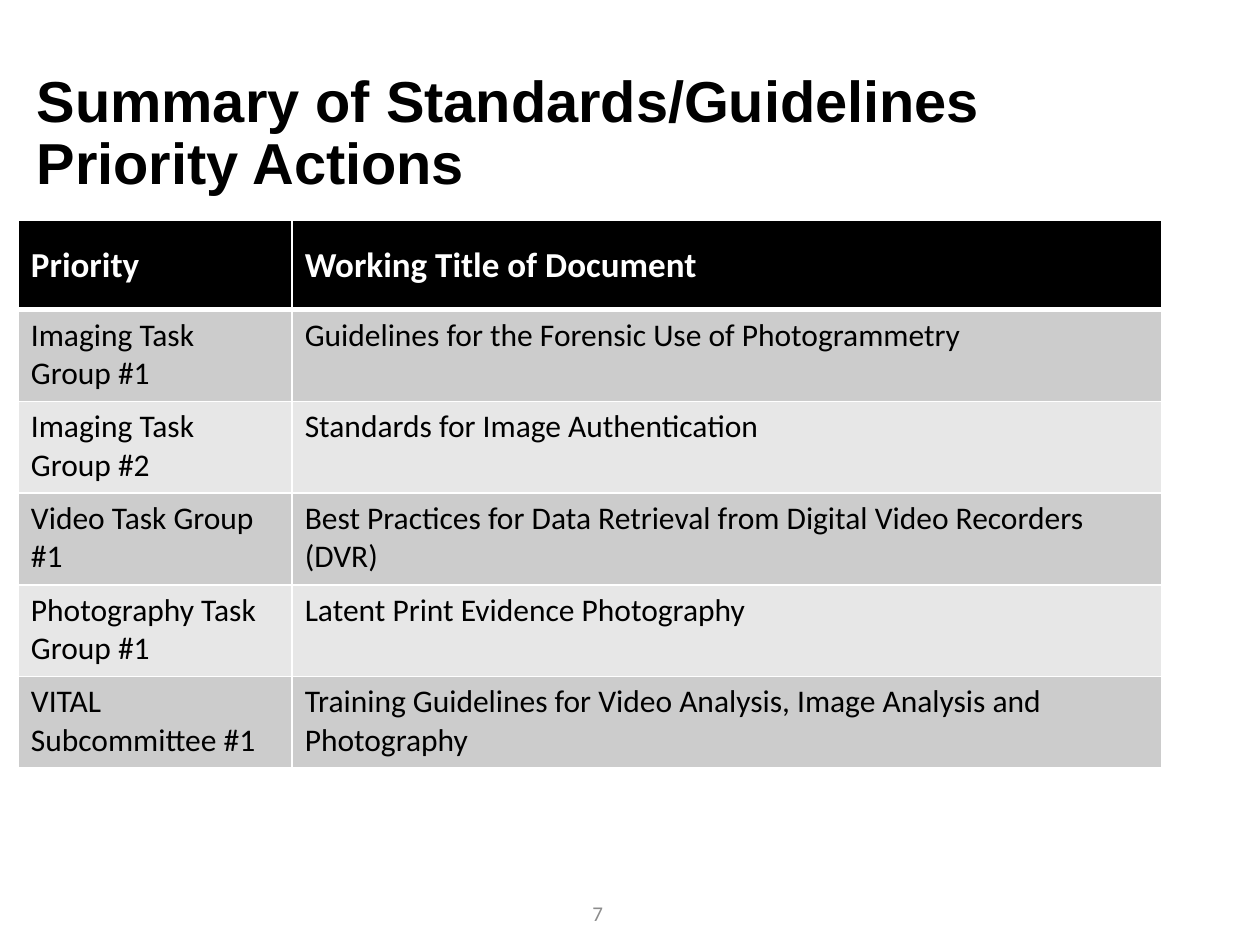
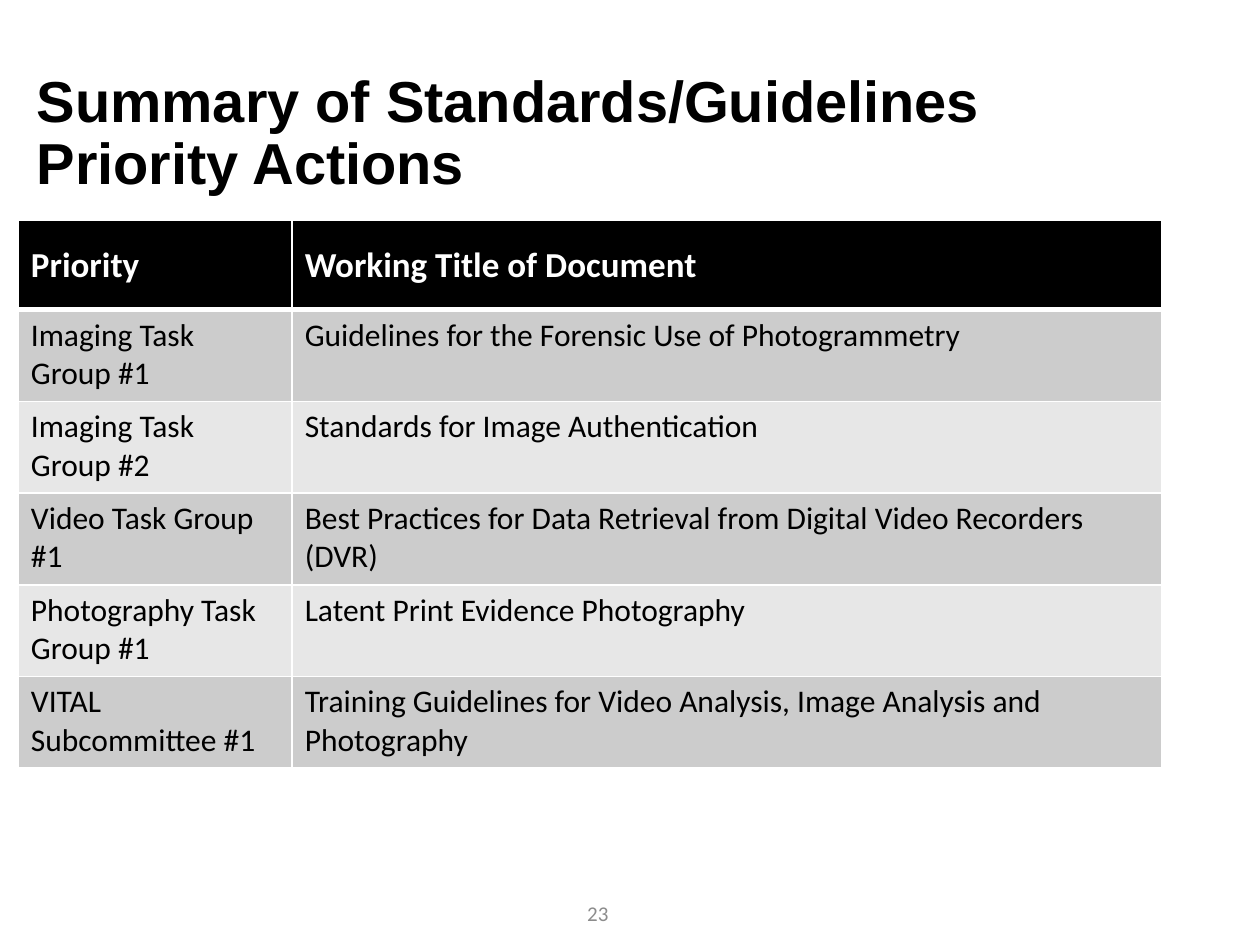
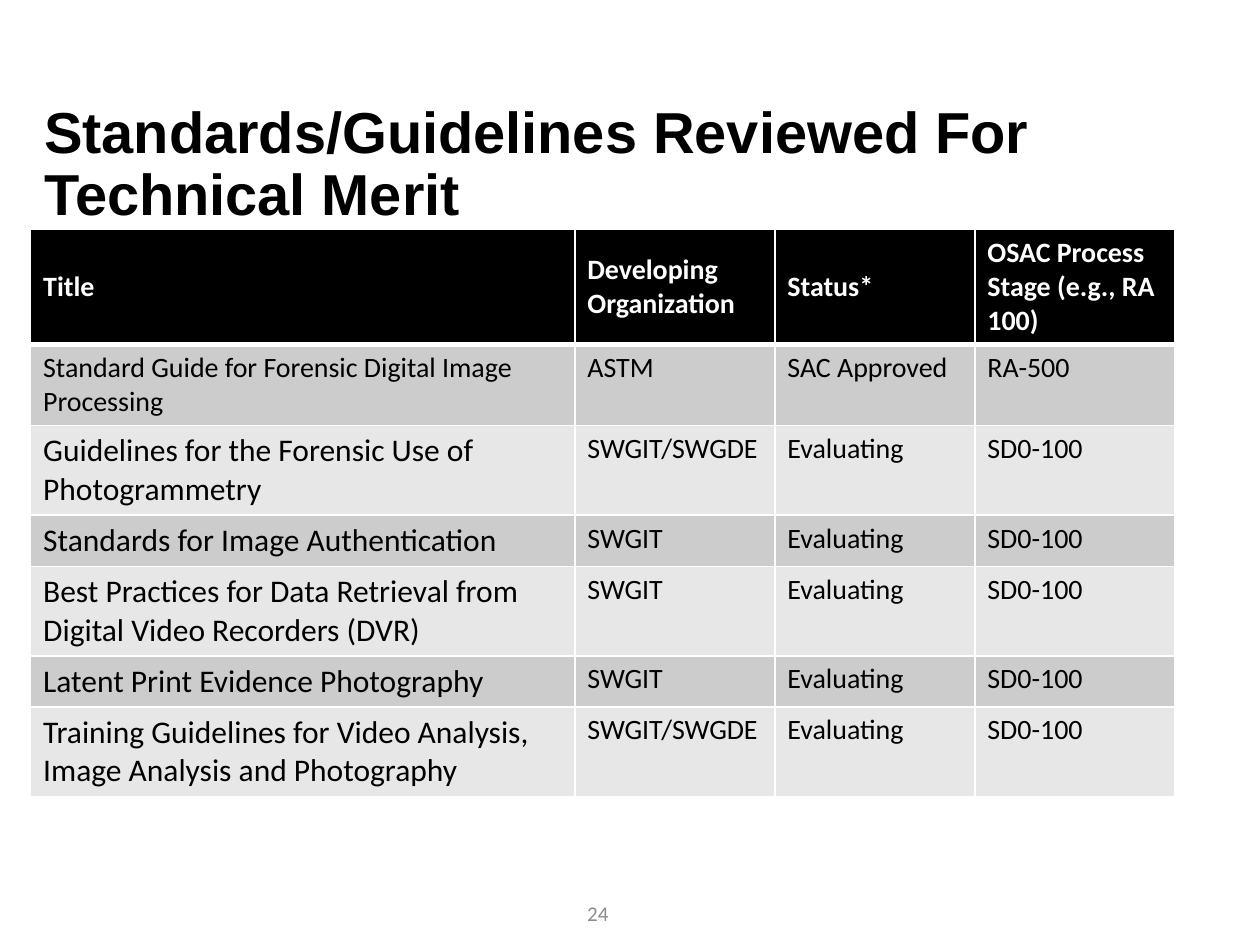
from dataclasses import dataclass

import pptx
import pptx.dml.color
import pptx.enum.text
import pptx.oxml.ns
import pptx.presentation
import pptx.slide
import pptx.table
import pptx.text.text
from lxml import etree

Pt = pptx.util.Pt
ANCHOR = pptx.enum.text.MSO_ANCHOR
ALIGN = pptx.enum.text.PP_ALIGN

COLORS = {
    "black": "000000",
    "white": "FFFFFF",
    "band_dark": "CCCCCC",
    "band_light": "E7E7E7",
    "page_number": "8C8C8C",
}
TITLE_FONT = "Arial"
BODY_FONT = "Calibri"
TITLE_ONLY = 5


@dataclass(frozen=True)
class Row:
    texts: tuple[str, ...]
    first_size: float
    size: float


@dataclass(frozen=True)
class TableSpec:
    left: float
    top: float
    widths: tuple[float, ...]
    header_height: float
    row_height: float
    rows: tuple[Row, ...]


@dataclass(frozen=True)
class SlideSpec:
    title: str
    title_left: float
    title_top: float
    table: TableSpec
    number: int


PHOTOGRAMMETRY = "Guidelines for the Forensic Use of Photogrammetry"
AUTHENTICATION = "Standards for Image Authentication"
RETRIEVAL = "Best Practices for Data Retrieval from Digital Video Recorders (DVR)"
LATENT_PRINT = "Latent Print Evidence Photography"
TRAINING = "Training Guidelines for Video Analysis, Image Analysis and Photography"

PRIORITIES = (
    ("Imaging Task Group #1", PHOTOGRAMMETRY),
    ("Imaging Task Group #2", AUTHENTICATION),
    ("Video Task Group #1", RETRIEVAL),
    ("Photography Task Group #1", LATENT_PRINT),
    ("VITAL Subcommittee #1", TRAINING),
)
EVALUATIONS = (
    (PHOTOGRAMMETRY, "SWGIT/SWGDE"),
    (AUTHENTICATION, "SWGIT"),
    (RETRIEVAL, "SWGIT"),
    (LATENT_PRINT, "SWGIT"),
    (TRAINING, "SWGIT/SWGDE"),
)

PRIORITY_TABLE = TableSpec(
    10.5, 126, (156.5, 497), 51, 52.4,
    (
        Row(("Priority", "Working Title of Document"), 20, 20),
        *(Row(texts, 18, 18) for texts in PRIORITIES),
    ),
)
REVIEW_TABLE = TableSpec(
    17.5, 131, (311, 114.3, 114.3, 114.3), 49, 29.2,
    (
        Row(("Title", "Developing Organization", "Status*",
             "OSAC Process Stage (e.g., RA 100)"), 16, 16),
        Row(("Standard Guide for Forensic Digital Image Processing",
             "ASTM", "SAC Approved", "RA-500"), 16, 16),
        *(Row((title, developer, "Evaluating", "SD0-100"), 18, 16)
          for title, developer in EVALUATIONS),
    ),
)

SUMMARY_TITLE = "Summary of Standards/Guidelines Priority Actions"
SLIDES = (
    SlideSpec(SUMMARY_TITLE, 13.7, 25, PRIORITY_TABLE, 7),
    SlideSpec(SUMMARY_TITLE, 13.7, 25, PRIORITY_TABLE, 23),
    SlideSpec("Standards/Guidelines Reviewed For Technical Merit",
              18, 42.5, REVIEW_TABLE, 24),
)


def rgb(name: str) -> pptx.dml.color.RGBColor:
    return pptx.dml.color.RGBColor.from_string(COLORS[name])


def add_run(p: pptx.text.text._Paragraph, text: str, size: float, color: str,
            font: str = BODY_FONT, bold: bool = False) -> None:
    r = p.add_run()
    r.text = text
    r.font.name = font
    r.font.size = Pt(size)
    r.font.bold = bold
    r.font.color.rgb = rgb(color)


def set_borders(cell: pptx.table._Cell, top: float, bottom: float) -> None:
    qn = pptx.oxml.ns.qn
    tc_pr = cell._tc.get_or_add_tcPr()
    for side, width in (("L", 1), ("R", 1), ("T", top), ("B", bottom)):
        ln = etree.SubElement(tc_pr, qn(f"a:ln{side}"), w=str(Pt(width)))
        fill = etree.SubElement(ln, qn("a:solidFill"))
        etree.SubElement(fill, qn("a:srgbClr"), val=COLORS["white"])


def add_title(slide: pptx.slide.Slide, spec: SlideSpec) -> None:
    sp = slide.shapes.title
    sp.left, sp.top = Pt(spec.title_left), Pt(spec.title_top)
    sp.width, sp.height = Pt(620.6), Pt(104.4)
    tf = sp.text_frame
    tf.word_wrap = True
    tf.auto_size = pptx.enum.text.MSO_AUTO_SIZE.NONE
    tf.vertical_anchor = ANCHOR.MIDDLE
    p = tf.paragraphs[0]
    p.alignment = ALIGN.LEFT
    p.line_spacing = 0.9
    add_run(p, spec.title, 33, "black", TITLE_FONT, True)


def add_table(slide: pptx.slide.Slide, spec: TableSpec) -> None:
    heights = [spec.header_height] + [spec.row_height] * (len(spec.rows) - 1)
    table = slide.shapes.add_table(
        len(spec.rows), len(spec.widths), Pt(spec.left), Pt(spec.top),
        Pt(sum(spec.widths)), Pt(sum(heights))).table
    table.horz_banding = False
    for column, width in zip(table.columns, spec.widths):
        column.width = Pt(width)
    for i, row in enumerate(spec.rows):
        table.rows[i].height = Pt(heights[i])
        header = i == 0
        band = "black" if header else ("band_light", "band_dark")[i % 2]
        for j, text in enumerate(row.texts):
            cell = table.cell(i, j)
            set_borders(cell, 3 if i == 1 else 1, 3 if header else 1)
            cell.fill.solid()
            cell.fill.fore_color.rgb = rgb(band)
            cell.vertical_anchor = ANCHOR.MIDDLE if header else ANCHOR.TOP
            add_run(cell.text_frame.paragraphs[0], text,
                    row.size if j else row.first_size,
                    "white" if header else "black", bold=header)


def add_page_number(slide: pptx.slide.Slide, number: int) -> None:
    sp = slide.shapes.add_textbox(Pt(260.6), Pt(507.6), Pt(162), Pt(28.8))
    tf = sp.text_frame
    tf.word_wrap = True
    tf.vertical_anchor = ANCHOR.MIDDLE
    p = tf.paragraphs[0]
    p.alignment = ALIGN.CENTER
    add_run(p, str(number), 12, "page_number")


def add_slide(prs: pptx.presentation.Presentation, spec: SlideSpec) -> None:
    slide = prs.slides.add_slide(prs.slide_layouts[TITLE_ONLY])
    add_title(slide, spec)
    add_table(slide, spec.table)
    add_page_number(slide, spec.number)


def main() -> None:
    prs = pptx.Presentation()
    prs.slide_width, prs.slide_height = Pt(720), Pt(540)
    for spec in SLIDES:
        add_slide(prs, spec)
    prs.save("out.pptx")


if __name__ == "__main__":
    main()
